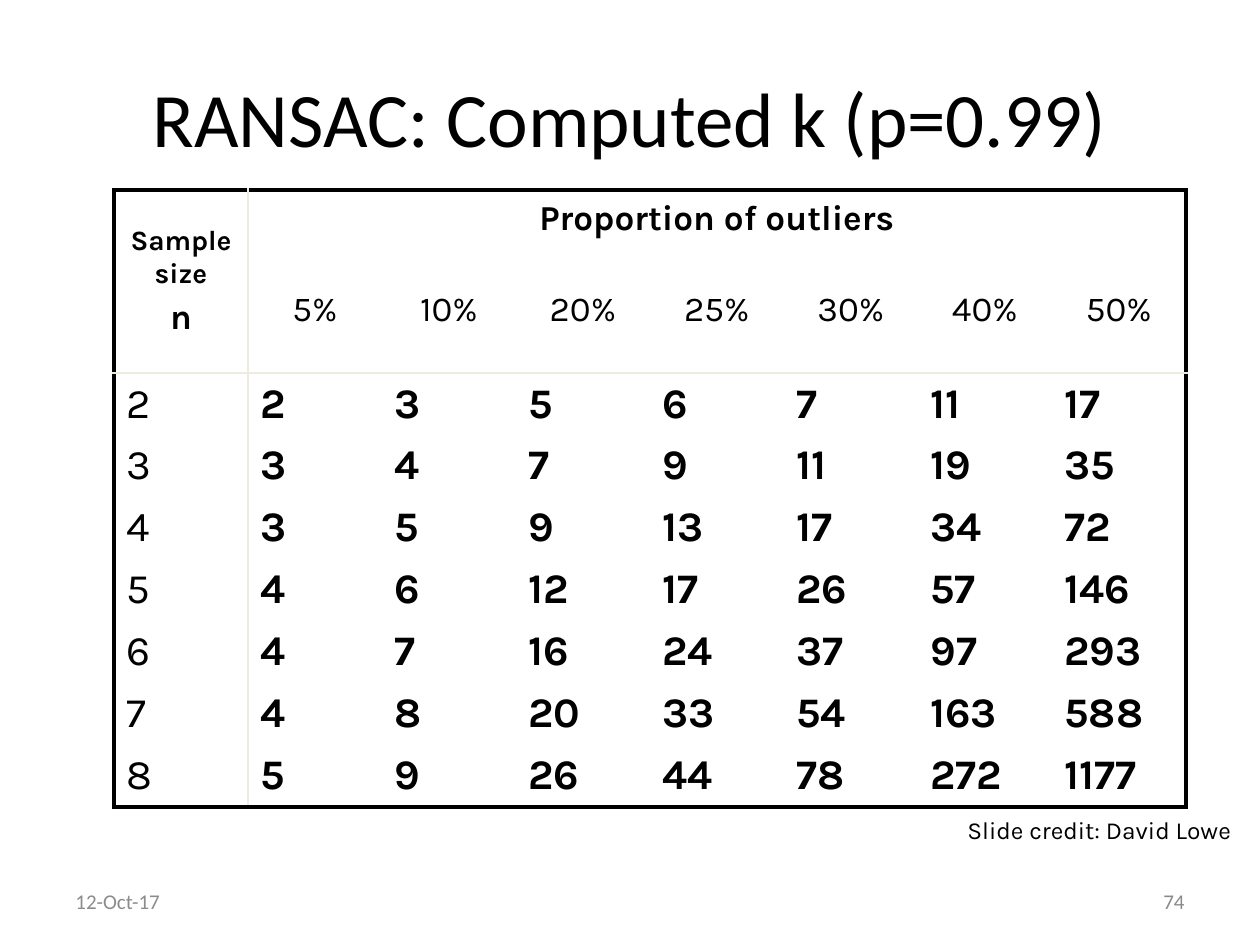
from pptx import Presentation, util as u
from pptx.dml.color import RGBColor
from pptx.enum import text
from pptx.oxml.ns import qn
from lxml import etree

PX = 914400 // 126
BLACK, CREAM = "000000", "EEECE1"
LEFT, CENTER, RIGHT = text.PP_ALIGN.LEFT, text.PP_ALIGN.CENTER, text.PP_ALIGN.RIGHT
TOP, MIDDLE = text.MSO_ANCHOR.TOP, text.MSO_ANCHOR.MIDDLE

# text, (left, top, width, height), font, size, colour, alignment, anchor, wrap
LABELS = [
    ("RANSAC: Computed k (p=0.99)", (63, 38, 1134, 157), "Calibri", 44, BLACK, CENTER, MIDDLE, True),
    ("Slide credit: David Lowe", (955, 809, 295, 43), "Karla", 14, BLACK, LEFT, TOP, False),
    ("12-Oct-17", (63, 876, 294, 50), "Calibri", 12, "8C8C8C", LEFT, MIDDLE, True),
    ("74", (903, 876, 294, 50), "Calibri", 12, "898989", RIGHT, MIDDLE, True),
]

SAMPLE_HEAD = [("Sample size", 16), ("n", 20)]
OUTLIER_HEAD = "Proportion of outliers"
OUTLIERS = ["5%", "10%", "20%", "25%", "30%", "40%", "50%"]
TRIALS = {
    2: [2, 3, 5, 6, 7, 11, 17],
    3: [3, 4, 7, 9, 11, 19, 35],
    4: [3, 5, 9, 13, 17, 34, 72],
    5: [4, 6, 12, 17, 26, 57, 146],
    6: [4, 7, 16, 24, 37, 97, 293],
    7: [4, 8, 20, 33, 54, 163, 588],
    8: [5, 9, 26, 44, 78, 272, 1177],
}
TABLE_LEFT, TABLE_TOP, COL_WIDTH = 114, 190, 134
ROW_HEIGHTS = [57, 126] + [62] * len(TRIALS)
ROWS, COLS = len(ROW_HEIGHTS), 1 + len(OUTLIERS)


def rgb(value):
    return RGBColor.from_string(value)


def style(p, name, size, color, align, bold=False):
    p.alignment = align
    f = p.font
    f.name, f.size, f.bold = name, u.Pt(size), bold
    f.color.rgb = rgb(color)


def add_label(s, words, box, name, size, color, align, anchor, wrap):
    tf = s.shapes.add_textbox(*(v * PX for v in box)).text_frame
    tf.word_wrap, tf.vertical_anchor = wrap, anchor
    tf.text = words
    style(tf.paragraphs[0], name, size, color, align)


def fill_cell(cell, lines, align, bold):
    cell.vertical_anchor = MIDDLE
    tf = cell.text_frame
    for i, (words, size) in enumerate(lines):
        p = tf.add_paragraph() if i else tf.paragraphs[0]
        p.text = str(words)
        if i:
            p.space_before = u.Pt(4)
        style(p, "Karla", size, BLACK, align, bold)


def grid_line(edge, last, rule):
    """Colour and points of a grid line: black outside, cream at the rule."""
    if edge in (0, last):
        return BLACK, 2.25
    return (CREAM, 1) if edge == rule else None


def set_borders(cell, row, col):
    bottom = row + (cell.span_height if cell.is_merge_origin else 1)
    right = col + (cell.span_width if cell.is_merge_origin else 1)
    edges = {
        "a:lnL": grid_line(col, COLS, 1), "a:lnR": grid_line(right, COLS, 1),
        "a:lnT": grid_line(row, ROWS, 2), "a:lnB": grid_line(bottom, ROWS, 2),
    }
    props = cell._tc.get_or_add_tcPr()
    for tag, line in edges.items():
        ln = etree.SubElement(props, qn(tag))
        if line is None:
            etree.SubElement(ln, qn("a:noFill"))
            continue
        color, points = line
        ln.set("w", str(int(points * 12700)))
        solid = etree.SubElement(ln, qn("a:solidFill"))
        etree.SubElement(solid, qn("a:srgbClr"), val=color)


def add_trials_table(s):
    frame = s.shapes.add_table(ROWS, COLS, TABLE_LEFT * PX, TABLE_TOP * PX,
                               COLS * COL_WIDTH * PX, sum(ROW_HEIGHTS) * PX)
    table = frame.table
    table.first_row = table.horz_banding = False
    for column in table.columns:
        column.width = COL_WIDTH * PX
    for row, height in zip(table.rows, ROW_HEIGHTS):
        row.height = height * PX

    table.cell(0, 0).merge(table.cell(1, 0))
    table.cell(0, 1).merge(table.cell(0, COLS - 1))
    fill_cell(table.cell(0, 0), SAMPLE_HEAD, CENTER, True)
    fill_cell(table.cell(0, 1), [(OUTLIER_HEAD, 20)], CENTER, True)
    for c, share in enumerate(OUTLIERS, 1):
        fill_cell(table.cell(1, c), [(share, 20)], CENTER, False)
    for r, (n, counts) in enumerate(TRIALS.items(), 2):
        for c, value in enumerate([n] + counts):
            fill_cell(table.cell(r, c), [(value, 24)], LEFT, c > 0)

    for r in range(ROWS):
        for c in range(COLS):
            cell = table.cell(r, c)
            set_borders(cell, r, c)
            cell.fill.background()


def main():
    prs = Presentation()
    prs.slide_width, prs.slide_height = 1260 * PX, 945 * PX
    s = prs.slides.add_slide(prs.slide_layouts[6])
    add_trials_table(s)
    for label in LABELS:
        add_label(s, *label)
    prs.save("out.pptx")


if __name__ == "__main__":
    main()
